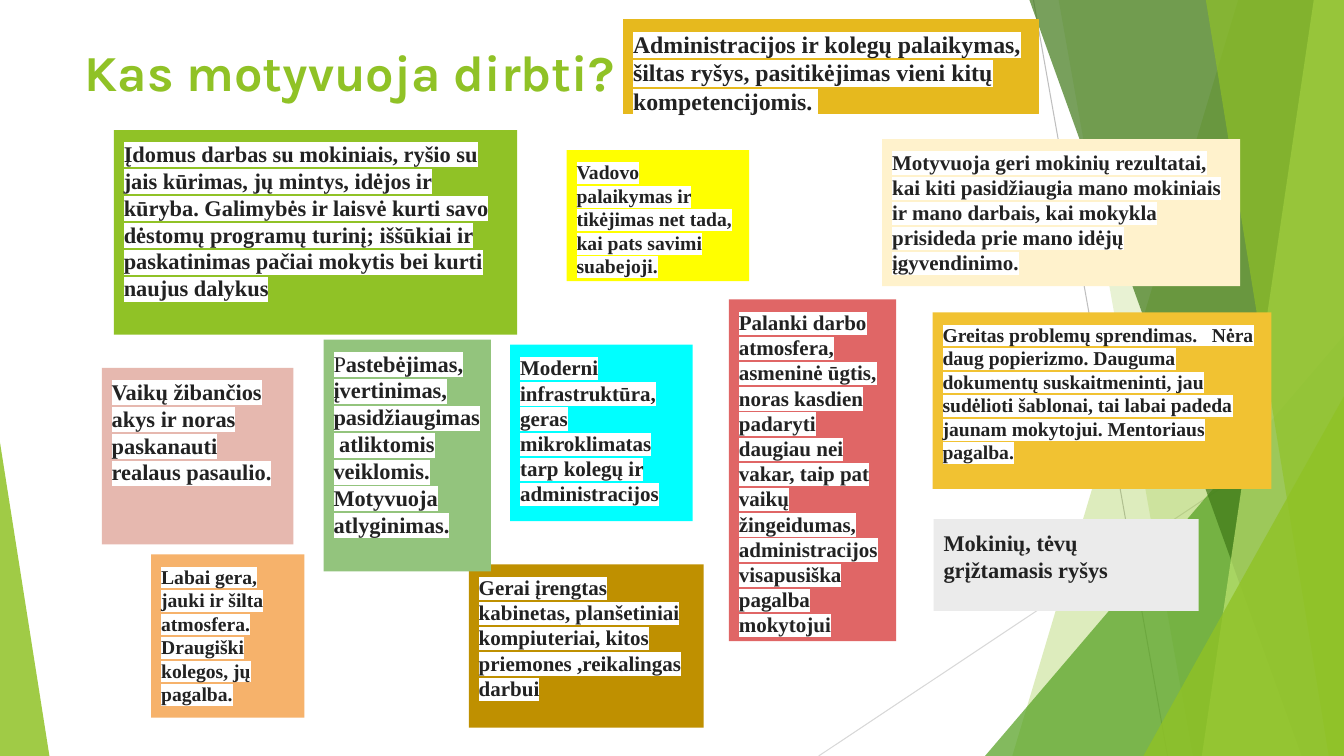
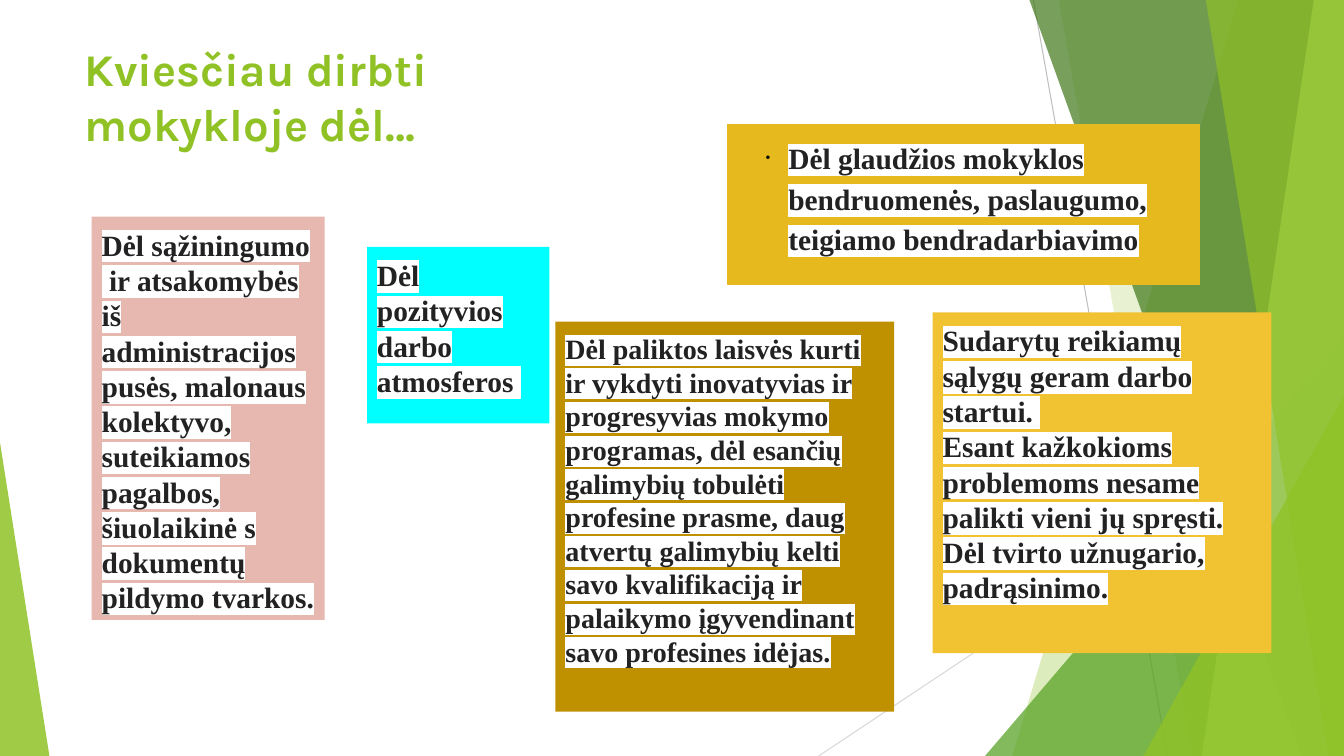
from pptx import Presentation
from pptx.dml.color import RGBColor
from pptx.enum.shapes import MSO_CONNECTOR as Connector, MSO_SHAPE as Shape
from pptx.enum.text import MSO_ANCHOR as Anchor, MSO_AUTO_SIZE as AutoSize, PP_ALIGN as Align
from pptx.oxml.ns import qn
from pptx.util import Inches, Pt
from lxml.etree import SubElement

WIDTH, HEIGHT = 13.33, 7.5
TITLE_FONT, NOTE_FONT = "Karla", "Times New Roman"
COLOURS = {
    "green": "90C226", "mid green": "54A021", "dark green": "3F7818",
    "light green": "BFE471", "line": "BFBFBF", "pale line": "D8D8D8",
    "text": "222222", "white": "FFFFFF", "black": "000000",
    "gold": "E6B91E", "yellow": "FFFF00", "pink": "E6B8AF", "cyan": "00FFFF",
    "amber": "F1C232", "orange": "F6B26B", "cream": "FFF2CC",
    "brown": "BF9000", "grey": "EBEBEB", "red": "E06666", "sage": "93C47D",
}


def rgb(colour):
    return RGBColor.from_string(COLOURS[colour])


class Deck:
    def __init__(self):
        self.prs = Presentation()
        self.prs.slide_width, self.prs.slide_height = Inches(WIDTH), Inches(HEIGHT)
        self.layout = self.prs.slide_layouts[5]
        self.slide = None

    def start(self, title, size, width, height):
        self.slide = self.prs.slides.add_slide(self.layout)
        heading = self.slide.shapes.title
        heading.left, heading.top = Inches(0.74), Inches(0.36)
        heading.width, heading.height = Inches(width), Inches(height)
        frame = heading.text_frame
        frame.text = title
        frame.word_wrap = True
        frame.auto_size = AutoSize.NONE
        frame.vertical_anchor = Anchor.TOP
        paragraph = frame.paragraphs[0]
        paragraph.alignment = Align.LEFT
        self.style(paragraph.runs[0], TITLE_FONT, size, "green")

    def style(self, run, name, size, colour, bold=True):
        font = run.font
        font.name, font.size, font.bold = name, Pt(size), bold
        font.color.rgb = rgb(colour)

    def paint(self, shape, colour, opacity=100, outline=False):
        shape.shadow.inherit = False
        shape.fill.solid()
        shape.fill.fore_color.rgb = rgb(colour)
        if opacity < 100:
            tint = shape.element.spPr.find(qn("a:solidFill"))[0]
            SubElement(tint, qn("a:alpha"), val=str(opacity * 1000))
        if outline:
            shape.line.color.rgb = rgb(colour)
            shape.line.width = Pt(0.75)
        else:
            shape.line.fill.background()

    def ray(self, group, start, end, colour):
        ray = group.shapes.add_connector(
            Connector.STRAIGHT, *map(Inches, start), *map(Inches, end))
        ray.line.color.rgb = rgb(colour)
        ray.line.width = Pt(0.75)
        SubElement(ray.element.spPr, qn("a:effectLst"))

    def facet(self, group, top, bottom, colour, opacity):
        """Band from a slanted edge, given by its top and bottom x, to the right side."""
        outline = group.shapes.build_freeform(Inches(top), 0)
        corners = [(WIDTH, 0), (WIDTH, HEIGHT), (bottom, HEIGHT)]
        outline.add_line_segments([(Inches(x), Inches(y)) for x, y in corners])
        self.paint(outline.convert_to_shape(), colour, opacity)

    def corner(self, group, left, top, width, apex, colour, opacity):
        """Triangle standing on the lower edge; apex is 0 (left) or 1 (right)."""
        corner = group.shapes.add_shape(
            Shape.ISOSCELES_TRIANGLE, Inches(left), Inches(top),
            Inches(width), Inches(HEIGHT - top))
        corner.adjustments[0] = apex
        self.paint(corner, colour, opacity)

    def backdrop(self):
        """Draw the facets once and hand them to the layout, behind its placeholders."""
        group = self.slide.shapes.add_group_shape()
        self.ray(group, (10.25, 0), (11.58, HEIGHT), "line")
        self.ray(group, (WIDTH, 4.03), (8.12, HEIGHT), "pale line")
        self.facet(group, 12.28, 10.04, "green", 30)
        self.facet(group, 10.5, 11.83, "green", 20)
        self.corner(group, 9.77, 3.33, 3.56, 1, "mid green", 72)
        self.facet(group, 10.21, 12.91, "dark green", 70)
        self.facet(group, 13.03, 11.92, "light green", 70)
        self.facet(group, 11.96, 13.18, "green", 65)
        self.corner(group, 11.34, 3.93, 1.99, 1, "green", 80)
        self.corner(group, 0, 4.39, 0.49, 0, "green", 85)
        for number, label in enumerate(group.element.xpath(".//p:cNvPr"), 100):
            label.set("id", str(number))
        self.layout.shapes.element.insert(2, group.element)

    def note(self, place, colour, size, *texts, lead="", highlight=True,
             outline=False, bullet=False):
        """Coloured note; lead is a start of the text that is not bold."""
        note = self.slide.shapes.add_shape(Shape.RECTANGLE, *map(Inches, place))
        self.paint(note, colour, outline=outline)
        frame = note.text_frame
        frame.word_wrap = True
        frame.vertical_anchor = Anchor.TOP
        frame.margin_left = frame.margin_right = Inches(0.1)
        frame.margin_top = frame.margin_bottom = Inches(0.1)
        frame.text = "\n".join(texts)
        for paragraph in frame.paragraphs:
            paragraph.alignment = Align.LEFT
            if lead:
                paragraph.text = lead
                paragraph.add_run().text = texts[0]
            for run in paragraph.runs:
                self.style(run, NOTE_FONT, size, "text", bold=run.text != lead)
                if highlight:
                    self.highlight(run)
            if bullet:
                self.bullet(paragraph)

    def highlight(self, run):
        properties = run.font._element
        marker = SubElement(properties, qn("a:highlight"))
        SubElement(marker, qn("a:srgbClr"), val=COLOURS["white"])
        properties.find(qn("a:solidFill")).addnext(marker)

    def bullet(self, paragraph):
        paragraph.line_spacing = 1.15
        properties = paragraph._p.get_or_add_pPr()
        properties.set("marL", str(Inches(0.5)))
        properties.set("indent", str(Inches(-0.25)))
        tint = SubElement(properties, qn("a:buClr"))
        SubElement(tint, qn("a:srgbClr"), val=COLOURS["black"])
        SubElement(properties, qn("a:buSzPts"), val="1200")
        SubElement(properties, qn("a:buFont"), typeface=NOTE_FONT)
        SubElement(properties, qn("a:buChar"), char="·")


def motivation(deck):
    deck.start("Kas motyvuoja dirbti?", 36, 9.4, 1.75)
    deck.backdrop()
    deck.note((1.13, 1.29, 4, 2.03), "green", 16,
              "Įdomus darbas su mokiniais, ryšio su jais kūrimas, jų mintys, idėjos ir "
              "kūryba. Galimybės ir laisvė kurti savo dėstomų programų turinį; iššūkiai ir "
              "paskatinimas pačiai mokytis bei kurti naujus dalykus")
    deck.note((6.18, 0.19, 4.12, 0.94), "gold", 17,
              "Administracijos ir kolegų palaikymas, šiltas ryšys, pasitikėjimas vieni kitų "
              "kompetencijomis. ", outline=True)
    deck.note((5.62, 1.49, 1.81, 1.3), "yellow", 14,
              "Vadovo palaikymas ir tikėjimas net tada, kai pats savimi suabejoji.")
    deck.note((1.01, 3.65, 1.9, 1.75), "pink", 16,
              "Vaikų žibančios akys ir noras paskanauti", "realaus pasaulio.")
    deck.note((5.06, 3.42, 1.81, 1.75), "cyan", 15,
              "Moderni infrastruktūra, geras mikroklimatas tarp kolegų ir administracijos")
    deck.note((9.25, 3.1, 3.36, 1.75), "amber", 14,
              "Greitas problemų sprendimas.   Nėra daug popierizmo. Dauguma dokumentų "
              "suskaitmeninti, jau sudėlioti šablonai, tai labai padeda jaunam mokytojui. "
              "Mentoriaus pagalba.")
    deck.note((1.5, 5.5, 1.52, 1.62), "orange", 14,
              "Labai gera, jauki ir šilta atmosfera. Draugiški kolegos, jų pagalba.")
    deck.note((8.75, 1.38, 3.55, 1.46), "cream", 15,
              "Motyvuoja geri mokinių rezultatai, kai kiti pasidžiaugia mano mokiniais ir "
              "mano darbais, kai mokykla prisideda prie mano idėjų įgyvendinimo.")
    deck.note((4.65, 5.6, 2.33, 1.62), "brown", 15,
              "Gerai įrengtas kabinetas, planšetiniai kompiuteriai, kitos priemones "
              ",reikalingas darbui")
    deck.note((9.26, 5.15, 2.63, 0.91), "grey", 16,
              "Mokinių, tėvų grįžtamasis ryšys", highlight=False)
    deck.note((7.23, 2.97, 1.66, 3.39), "red", 15,
              "Palanki darbo atmosfera, asmeninė ūgtis, noras kasdien padaryti daugiau nei "
              "vakar, taip pat vaikų žingeidumas, administracijos visapusiška pagalba "
              "mokytojui")
    deck.note((3.21, 3.37, 1.66, 2.3), "sage", 16,
              "astebėjimas, įvertinimas, pasidžiaugimas  atliktomis veiklomis. Motyvuoja "
              "atlyginimas.", lead="P")


def invitation(deck):
    deck.start("Kviesčiau dirbti mokykloje dėl…", 32.4, 4.52, 0.77)
    deck.note((7.22, 1.24, 4.68, 1.58), "gold", 21,
              "Dėl glaudžios mokyklos bendruomenės, paslaugumo, teigiamo bendradarbiavimo",
              outline=True, bullet=True)
    deck.note((0.91, 2.15, 2.31, 4), "pink", 21,
              "Dėl sąžiningumo  ir atsakomybės iš administracijos pusės, malonaus "
              "kolektyvo, suteikiamos pagalbos, šiuolaikinė s dokumentų pildymo tvarkos.")
    deck.note((3.64, 2.45, 1.81, 1.75), "cyan", 21, "Dėl pozityvios darbo atmosferos ")
    deck.note((9.25, 3.1, 3.36, 3.38), "amber", 21,
              "Sudarytų reikiamų sąlygų geram darbo startui. ",
              "Esant kažkokioms problemoms nesame palikti vieni jų spręsti. Dėl tvirto "
              "užnugario, padrąsinimo.")
    deck.note((5.51, 3.19, 3.36, 3.87), "brown", 20,
              "Dėl paliktos laisvės kurti ir vykdyti inovatyvias ir progresyvias mokymo "
              "programas, dėl esančių galimybių tobulėti profesine prasme, daug atvertų "
              "galimybių kelti savo kvalifikaciją ir palaikymo įgyvendinant savo profesines "
              "idėjas.")


def main():
    deck = Deck()
    motivation(deck)
    invitation(deck)
    deck.prs.save("out.pptx")


if __name__ == "__main__":
    main()
